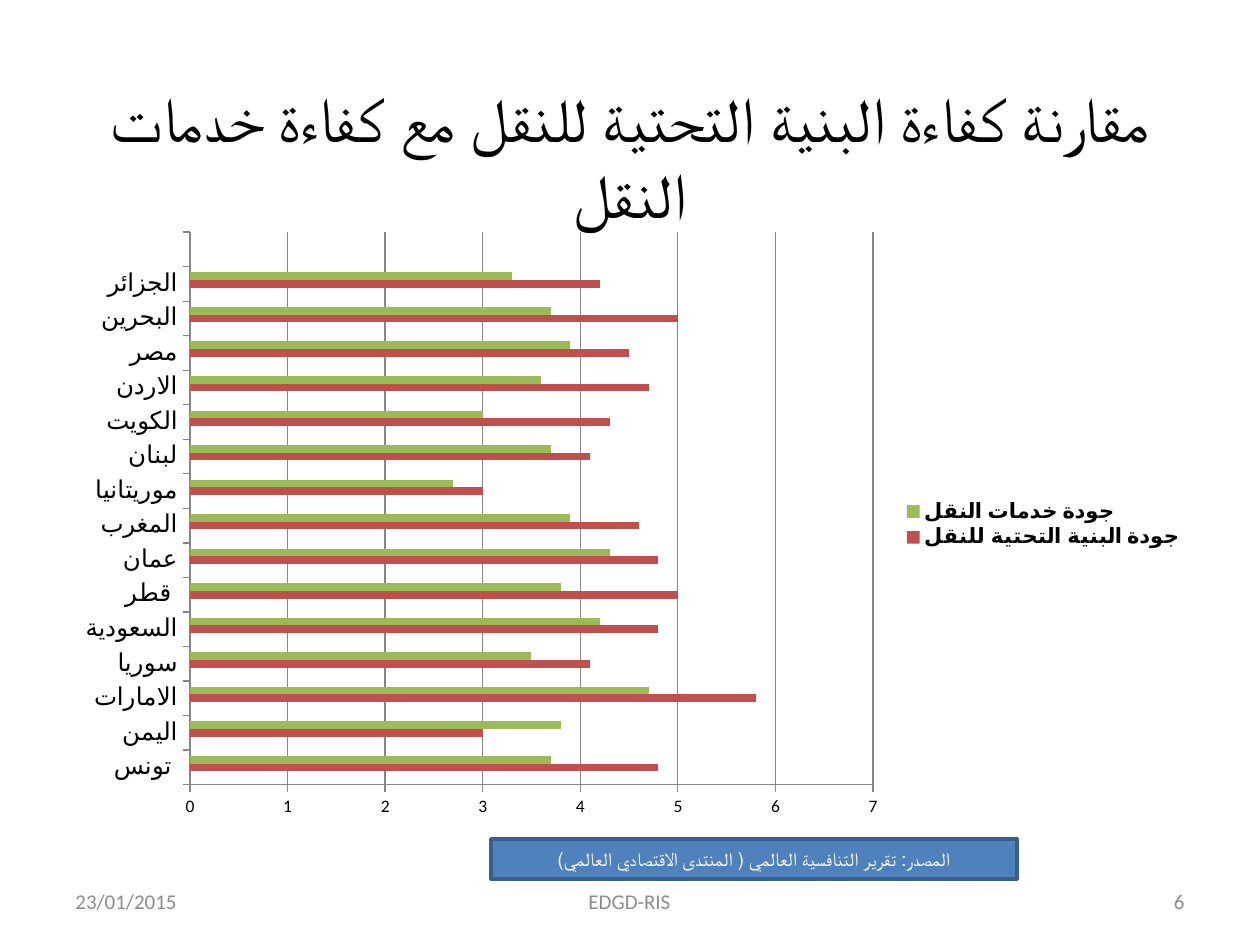
import pptx
import pptx.util
import pptx.dml.color
import pptx.chart.data
import pptx.enum.chart
import pptx.enum.shapes
import pptx.enum.text
from lxml import etree

SCALE = 914400 / 126
FONT = "Calibri"
COLORS = {
    "ink": "000000",
    "muted": "8C8C8C",
    "white": "FFFFFF",
    "blue": "4F81BD",
    "edge": "3A5F8C",
    "red": "C0504D",
    "green": "9BBB59",
    "grid": "868686",
}
ALIGN = pptx.enum.text.PP_ALIGN

LANDS = ["تونس ", "اليمن", "الامارات", "سوريا", "السعودية", "قطر ", "عمان", "المغرب",
         "موريتانيا", "لبنان", "الكويت", "الاردن", "مصر", "البحرين", "الجزائر", ""]
SERIES = [
    ("البلد", "blue", [0] * 15 + [None]),
    ("جودة البنية التحتية للنقل", "red",
     [4.8, 3, 5.8, 4.1, 4.8, 5, 4.8, 4.6, 3, 4.1, 4.3, 4.7, 4.5, 5, 4.2, None]),
    ("جودة خدمات النقل", "green",
     [3.7, 3.8, 4.7, 3.5, 4.2, 3.8, 4.3, 3.9, 2.7, 3.7, 3, 3.6, 3.9, 3.7, 3.3, None]),
]


def px(num):
    return pptx.util.Emu(round(num * SCALE))


def place(box):
    return [px(num) for num in box]


def color(name):
    return pptx.dml.color.RGBColor.from_string(COLORS[name])


def style(font, size, name, bold=False):
    font.name = FONT
    font.size = pptx.util.Pt(size)
    font.bold = bold
    font.color.rgb = color(name)


def write(shape, text, size, name, align, rtl=False):
    frame = shape.text_frame
    frame.word_wrap = True
    frame.vertical_anchor = pptx.enum.text.MSO_ANCHOR.MIDDLE
    para = frame.paragraphs[0]
    para.alignment = align
    if rtl:
        para._p.get_or_add_pPr().set("rtl", "1")
    run = para.add_run()
    run.text = text
    style(run.font, size, name)
    return frame


def add_title(slide, box):
    shape = slide.shapes.add_textbox(*place(box))
    frame = write(shape, "مقارنة كفاءة البنية التحتية للنقل مع كفاءة خدمات النقل",
                  36, "ink", ALIGN.CENTER, True)
    frame.margin_top = px(83)
    frame.margin_bottom = px(6)


def add_footer(slide, box):
    left, top, width, height = box
    side, mid = 294, 399
    parts = [
        (0, side, "23/01/2015", ALIGN.LEFT),
        ((width - mid) // 2, mid, "EDGD-RIS", ALIGN.CENTER),
        (width - side, side, "6", ALIGN.RIGHT),
    ]
    for shift, span, text, align in parts:
        shape = slide.shapes.add_textbox(*place((left + shift, top, span, height)))
        write(shape, text, 12, "muted", align)


def add_source(slide, box):
    kind = pptx.enum.shapes.MSO_SHAPE.RECTANGLE
    shape = slide.shapes.add_shape(kind, *place(box))
    shape.shadow.inherit = False
    shape.fill.solid()
    shape.fill.fore_color.rgb = color("blue")
    shape.line.color.rgb = color("edge")
    shape.line.width = pptx.util.Pt(2)
    write(shape, "المصدر: تقرير التنافسية العالمي ( المنتدى الاقتصادي العالمي)",
          11, "white", ALIGN.CENTER, True)


def hide_entry(legend, index):
    space = "{http://schemas.openxmlformats.org/drawingml/2006/chart}"
    entry = etree.Element(space + "legendEntry")
    etree.SubElement(entry, space + "idx").set("val", str(index))
    etree.SubElement(entry, space + "delete").set("val", "1")
    legend._element.find(space + "legendPos").addnext(entry)


def add_bars(slide, box):
    data = pptx.chart.data.CategoryChartData()
    data.categories = LANDS
    for name, _, vals in SERIES:
        data.add_series(name, vals)
    kind = pptx.enum.chart.XL_CHART_TYPE.BAR_CLUSTERED
    chart = slide.shapes.add_chart(kind, *place(box), data).chart
    chart.has_title = False
    style(chart.font, 10, "ink")

    plot = chart.plots[0]
    plot.vary_by_categories = False
    plot.gap_width = 150
    plot.overlap = 0
    for item, (_, tone, _) in zip(plot.series, SERIES):
        item.format.fill.solid()
        item.format.fill.fore_color.rgb = color(tone)

    for axis, size in ((chart.category_axis, 14), (chart.value_axis, 10)):
        style(axis.tick_labels.font, size, "ink")
        axis.major_tick_mark = pptx.enum.chart.XL_TICK_MARK.OUTSIDE
        axis.format.line.color.rgb = color("grid")
    axis = chart.value_axis
    axis.minimum_scale = 0
    axis.maximum_scale = 7
    axis.major_unit = 1
    axis.has_major_gridlines = True
    axis.major_gridlines.format.line.color.rgb = color("grid")

    chart.has_legend = True
    legend = chart.legend
    legend.position = pptx.enum.chart.XL_LEGEND_POSITION.RIGHT
    legend.include_in_layout = False
    style(legend.font, 12, "ink", True)
    hide_entry(legend, 2)


def main():
    deck = pptx.Presentation()
    deck.slide_width = px(1260)
    deck.slide_height = px(945)
    slide = deck.slides.add_slide(deck.slide_layouts[6])
    add_title(slide, (63, 38, 1134, 157))
    add_footer(slide, (63, 876, 1134, 50))
    add_bars(slide, (63, 220, 1134, 609))
    add_source(slide, (491, 839, 526, 40))
    deck.save("out.pptx")


if __name__ == "__main__":
    main()
